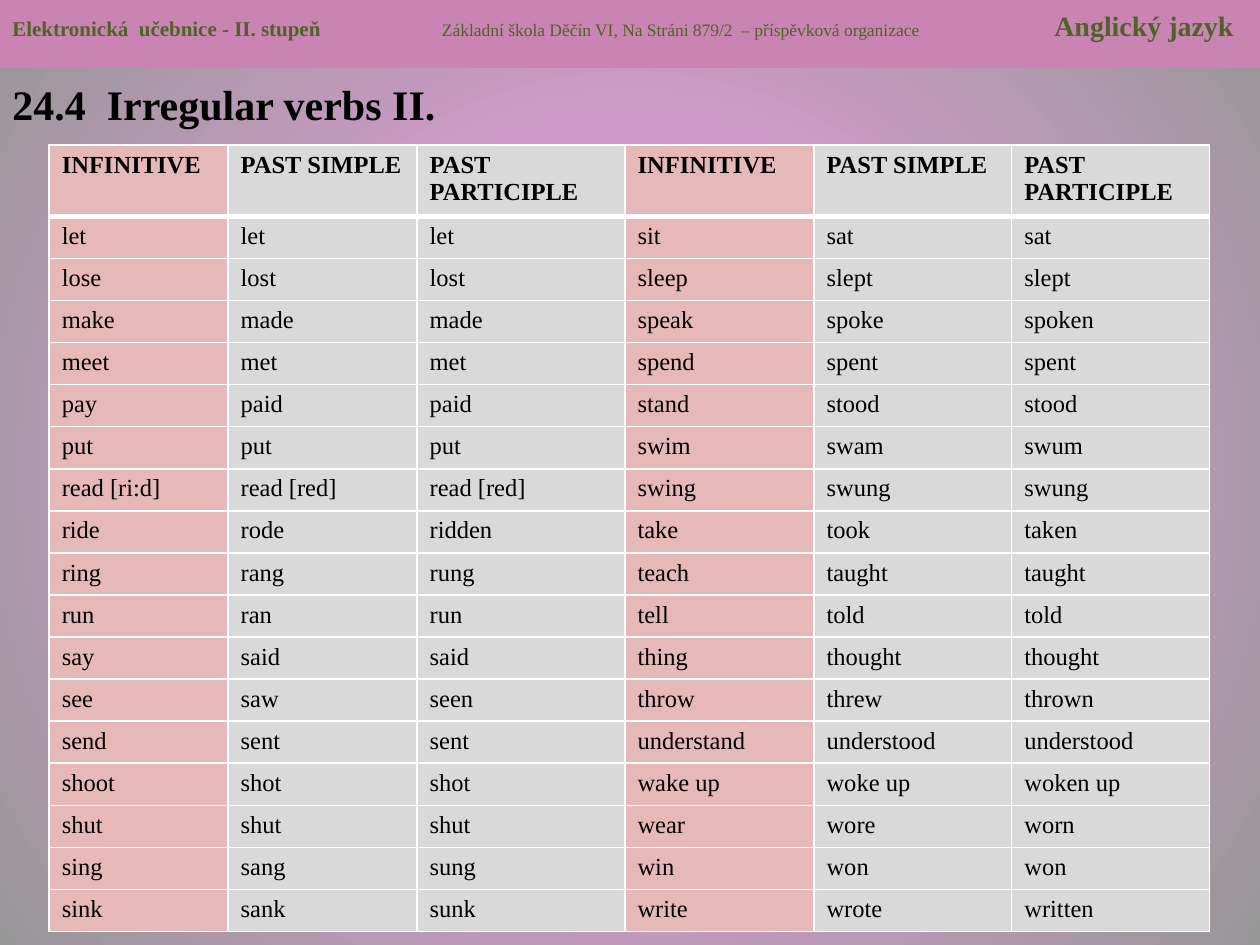
from lxml.etree import SubElement
from pptx import Presentation
from pptx.dml.color import RGBColor
from pptx.enum.shapes import MSO_SHAPE
from pptx.enum.text import MSO_ANCHOR, PP_ALIGN
from pptx.oxml.ns import qn
from pptx.util import Inches, Pt

FONT = "Times New Roman"
BLACK = RGBColor(0x00, 0x00, 0x00)
WHITE = RGBColor(0xFF, 0xFF, 0xFF)
PINK = RGBColor(0xFA, 0x9C, 0xEF)
GREY = RGBColor(0x97, 0x97, 0x97)
MAUVE = RGBColor(0xCA, 0x84, 0xB3)
GREEN = RGBColor(0x4F, 0x62, 0x28)
ROSE = RGBColor(0xE6, 0xB9, 0xB8)
SILVER = RGBColor(0xD9, 0xD9, 0xD9)

BANNER = [
    ("Elektronická  učebnice - II. stupeň", 12, True),
    ("\tZákladní škola Děčín VI, Na Stráni 879/2  – příspěvková organizace", 10, False),
    ("\tAnglický jazyk", 16, True),
]
BANNER_TABS = [3.41, 8.27]

COL_WIDTHS = [1.42, 1.5, 1.65, 1.5, 1.57, 1.57]
HEADER_HEIGHT = 0.56
HEADINGS = ["INFINITIVE", "PAST SIMPLE", "PAST PARTICIPLE"] * 2
VERBS = [
    ["let", "let", "let", "sit", "sat", "sat"],
    ["lose", "lost", "lost", "sleep", "slept", "slept"],
    ["make", "made", "made", "speak", "spoke", "spoken"],
    ["meet", "met", "met", "spend", "spent", "spent"],
    ["pay", "paid", "paid", "stand", "stood", "stood"],
    ["put", "put", "put", "swim", "swam", "swum"],
    ["read [ri:d]", "read [red]", "read [red]", "swing", "swung", "swung"],
    ["ride", "rode", "ridden", "take", "took", "taken"],
    ["ring", "rang", "rung", "teach", "taught", "taught"],
    ["run", "ran", "run", "tell", "told", "told"],
    ["say", "said", "said", "thing", "thought", "thought"],
    ["see", "saw", "seen", "throw", "threw", "thrown"],
    ["send", "sent", "sent", "understand", "understood", "understood"],
    ["shoot", "shot", "shot", "wake up", "woke up", "woken up"],
    ["shut", "shut", "shut", "wear", "wore", "worn"],
    ["sing", "sang", "sung", "win", "won", "won"],
    ["sink", "sank", "sunk", "write", "wrote", "written"],
]


def set_font(font, size, bold, color):
    """Apply the slide's typeface with a size, weight and colour."""
    font.name = FONT
    font.size = Pt(size)
    font.bold = bold
    font.color.rgb = color


def paint_background(s):
    """Fill the slide with a circular gradient, pink in the centre."""
    fill = s.background.fill
    fill.gradient()
    for stop, color in zip(fill.gradient_stops, (PINK, GREY)):
        stop.color.rgb = color
    grad = s.background._cSld.find(".//" + qn("a:gradFill"))
    grad.remove(grad.find(qn("a:lin")))
    circle = SubElement(grad, qn("a:path"), path="circle")
    SubElement(circle, qn("a:fillToRect"), l="50000", t="50000", r="50000", b="50000")


def add_title(s, x, y, w, h):
    """Write the lesson title at the top of its box."""
    tf = s.shapes.add_textbox(Inches(x), Inches(y), Inches(w), Inches(h)).text_frame
    tf.word_wrap = True
    tf.margin_top = Inches(0.08)
    p = tf.paragraphs[0]
    p.text = "24.4  Irregular verbs II."
    set_font(p.font, 24, True, BLACK)


def add_banner(s, x, y, w, h):
    """Draw the coloured band with three tabbed labels."""
    sp = s.shapes.add_shape(MSO_SHAPE.RECTANGLE, Inches(x), Inches(y), Inches(w), Inches(h))
    sp.shadow.inherit = False
    sp.fill.solid()
    sp.fill.fore_color.rgb = MAUVE
    sp.line.fill.background()
    tf = sp.text_frame
    tf.word_wrap = True
    tf.vertical_anchor = MSO_ANCHOR.TOP
    tf.margin_top = Inches(0.07)
    p = tf.paragraphs[0]
    p.alignment = PP_ALIGN.LEFT
    tabs = SubElement(p._p.get_or_add_pPr(), qn("a:tabLst"))
    for pos in BANNER_TABS:
        SubElement(tabs, qn("a:tab"), pos=str(Inches(pos)), algn="l")
    for text, size, bold in BANNER:
        r = p.add_run()
        r.text = text
        set_font(r.font, size, bold, GREEN)


def set_borders(cell, top, bottom):
    """Give a cell white borders, with widths in points for top and bottom."""
    tc_pr = cell._tc.get_or_add_tcPr()
    for side, width in (("L", 1), ("R", 1), ("T", top), ("B", bottom)):
        ln = SubElement(tc_pr, qn(f"a:ln{side}"), w=str(Pt(width)))
        SubElement(SubElement(ln, qn("a:solidFill")), qn("a:srgbClr"), val=str(WHITE))


def add_verb_table(s, x, y, w, h):
    """Lay out the verbs, with the infinitive columns in rose."""
    rows = [HEADINGS] + VERBS
    table = s.shapes.add_table(
        len(rows), len(HEADINGS), Inches(x), Inches(y), Inches(w), Inches(h)
    ).table
    for col, width in zip(table.columns, COL_WIDTHS):
        col.width = Inches(width)
    for i, words in enumerate(rows):
        table.rows[i].height = Inches((h - HEADER_HEIGHT) / len(VERBS) if i else HEADER_HEIGHT)
        for j, word in enumerate(words):
            cell = table.cell(i, j)
            set_borders(cell, 3 if i == 1 else 1, 1 if i else 3)
            cell.fill.solid()
            cell.fill.fore_color.rgb = SILVER if j % 3 else ROSE
            p = cell.text_frame.paragraphs[0]
            p.text = word
            set_font(p.font, 14, i == 0, BLACK)


def main():
    """Build the slide and save it."""
    prs = Presentation()
    prs.slide_width, prs.slide_height = Inches(10), Inches(7.5)
    s = prs.slides.add_slide(prs.slide_layouts[6])
    paint_background(s)
    add_title(s, 0, 0.54, 10, 6.96)
    add_banner(s, 0, 0, 10, 0.54)
    add_verb_table(s, 0.39, 1.15, 9.21, 6.23)
    prs.save("out.pptx")


if __name__ == "__main__":
    main()
